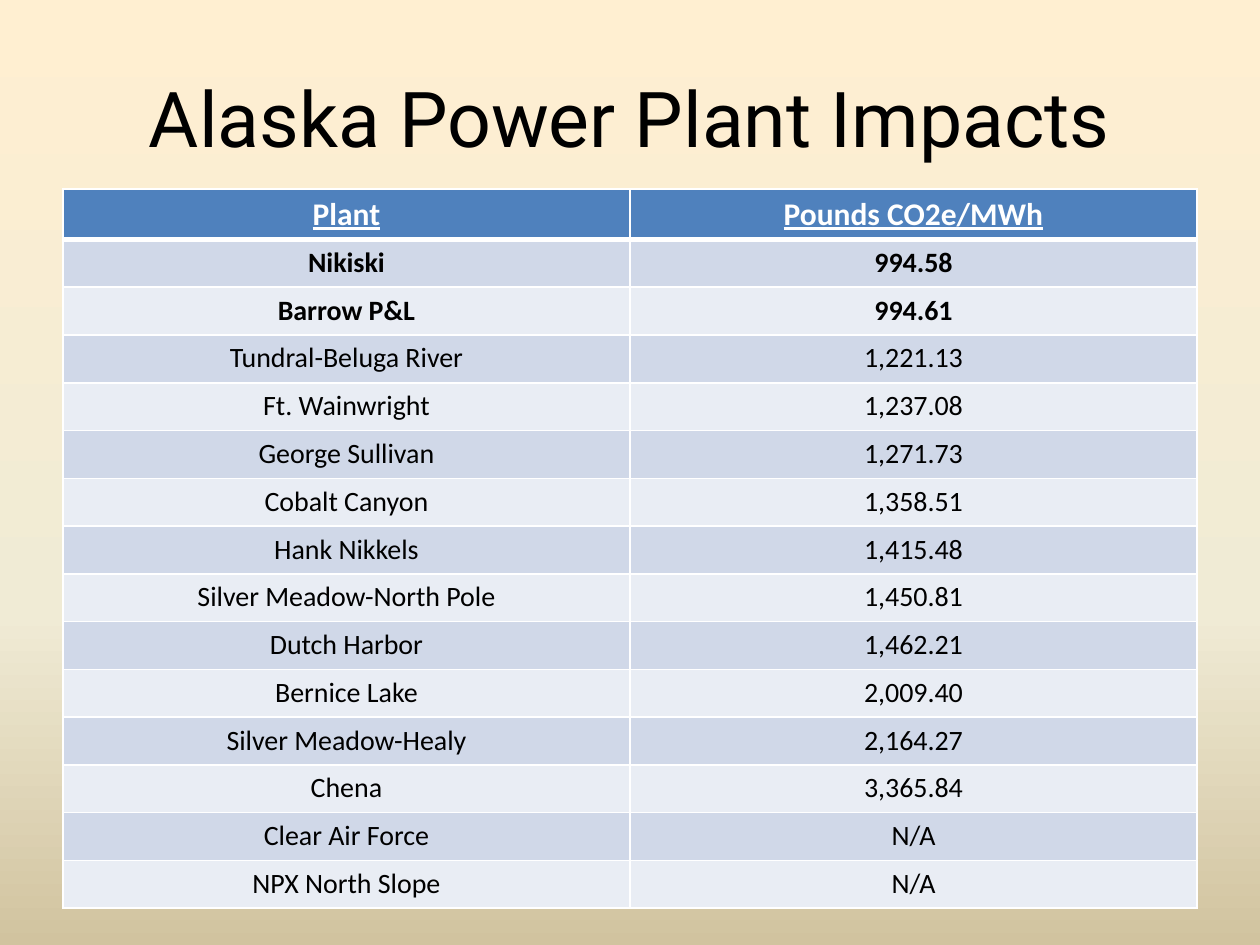
from copy import deepcopy

from lxml import etree
from pptx import Presentation
from pptx.dml.color import RGBColor
from pptx.enum.text import MSO_ANCHOR, PP_ALIGN
from pptx.oxml.ns import qn
from pptx.util import Inches, Pt

CENTER, MIDDLE = PP_ALIGN.CENTER, MSO_ANCHOR.MIDDLE

# Content
TITLE = "Alaska Power Plant Impacts"
HEADINGS = ("Plant", "Pounds CO2e/MWh")
PLANTS = [
    ("Nikiski", "994.58"),
    ("Barrow P&L", "994.61"),
    ("Tundral-Beluga River", "1,221.13"),
    ("Ft. Wainwright", "1,237.08"),
    ("George Sullivan", "1,271.73"),
    ("Cobalt Canyon", "1,358.51"),
    ("Hank Nikkels", "1,415.48"),
    ("Silver Meadow-North Pole", "1,450.81"),
    ("Dutch Harbor", "1,462.21"),
    ("Bernice Lake", "2,009.40"),
    ("Silver Meadow-Healy", "2,164.27"),
    ("Chena", "3,365.84"),
    ("Clear Air Force", "N/A"),
    ("NPX North Slope", "N/A"),
]
CLEANEST = 2  # leading plants set in bold

COLORS = {
    "text": "000000", "white": "FFFFFF", "header": "4F81BD",
    "band_dark": "D0D8E8", "band_light": "E9EDF4",
}
BACKDROP = [(0, "FFEFD1"), (0.65, "F0EBD5"), (1, "D1C39F")]

# Layout
WIDTH, HEIGHT = Inches(10), Inches(7.5)
MARGIN = int(WIDTH * 0.05)
CONTENT_WIDTH = WIDTH - 2 * MARGIN
TITLE_TOP, TITLE_HEIGHT = int(HEIGHT * 0.04), Inches(1.25)
TABLE_TOP, TABLE_HEIGHT = int(HEIGHT * 0.2), Inches(5.69)


def add_text(paragraph, text, size, color, font="Calibri", bold=False, underline=False):
    paragraph.alignment = CENTER
    run = paragraph.add_run()
    run.text = text
    run.font.name, run.font.size = font, Pt(size)
    run.font.bold, run.font.underline = bold, underline
    run.font.color.rgb = RGBColor.from_string(COLORS[color])


def add_borders(cell, bottom, top=1):
    properties = cell._tc.get_or_add_tcPr()
    for side, points in (("L", 1), ("R", 1), ("T", top), ("B", bottom)):
        line = etree.SubElement(properties, qn(f"a:ln{side}"), w=str(Pt(points)))
        fill = etree.SubElement(line, qn("a:solidFill"))
        etree.SubElement(fill, qn("a:srgbClr"), val=COLORS["white"])


def paint_background(slide):
    fill = slide.background.fill
    fill.gradient()
    fill.gradient_angle = 270
    stops = fill._fill._gradFill.gsLst
    stops.append(deepcopy(stops[0]))
    for stop, (position, color) in zip(fill.gradient_stops, BACKDROP):
        stop.position = position
        stop.color.rgb = RGBColor.from_string(color)


def add_title(slide):
    frame = slide.shapes.add_textbox(MARGIN, TITLE_TOP, CONTENT_WIDTH, TITLE_HEIGHT).text_frame
    frame.word_wrap = True
    frame.vertical_anchor = MIDDLE
    add_text(frame.paragraphs[0], TITLE, 44, "text", font="Roboto")


def add_plant_table(slide):
    rows = [HEADINGS, *PLANTS]
    table = slide.shapes.add_table(
        len(rows), len(HEADINGS), MARGIN, TABLE_TOP, CONTENT_WIDTH, TABLE_HEIGHT
    ).table
    for r, row in enumerate(rows):
        is_header = r == 0
        band = "header" if is_header else "band_dark" if r % 2 else "band_light"
        for c, text in enumerate(row):
            cell = table.cell(r, c)
            add_borders(cell, bottom=3 if is_header else 1, top=3 if r == 1 else 1)
            cell.fill.solid()
            cell.fill.fore_color.rgb = RGBColor.from_string(COLORS[band])
            add_text(
                cell.text_frame.paragraphs[0], text,
                size=18 if is_header else 16,
                color="white" if is_header else "text",
                bold=r <= CLEANEST, underline=is_header,
            )


def main():
    deck = Presentation()
    deck.slide_width, deck.slide_height = WIDTH, HEIGHT
    slide = deck.slides.add_slide(deck.slide_layouts[6])
    paint_background(slide)
    add_title(slide)
    add_plant_table(slide)
    deck.save("out.pptx")


if __name__ == "__main__":
    main()
